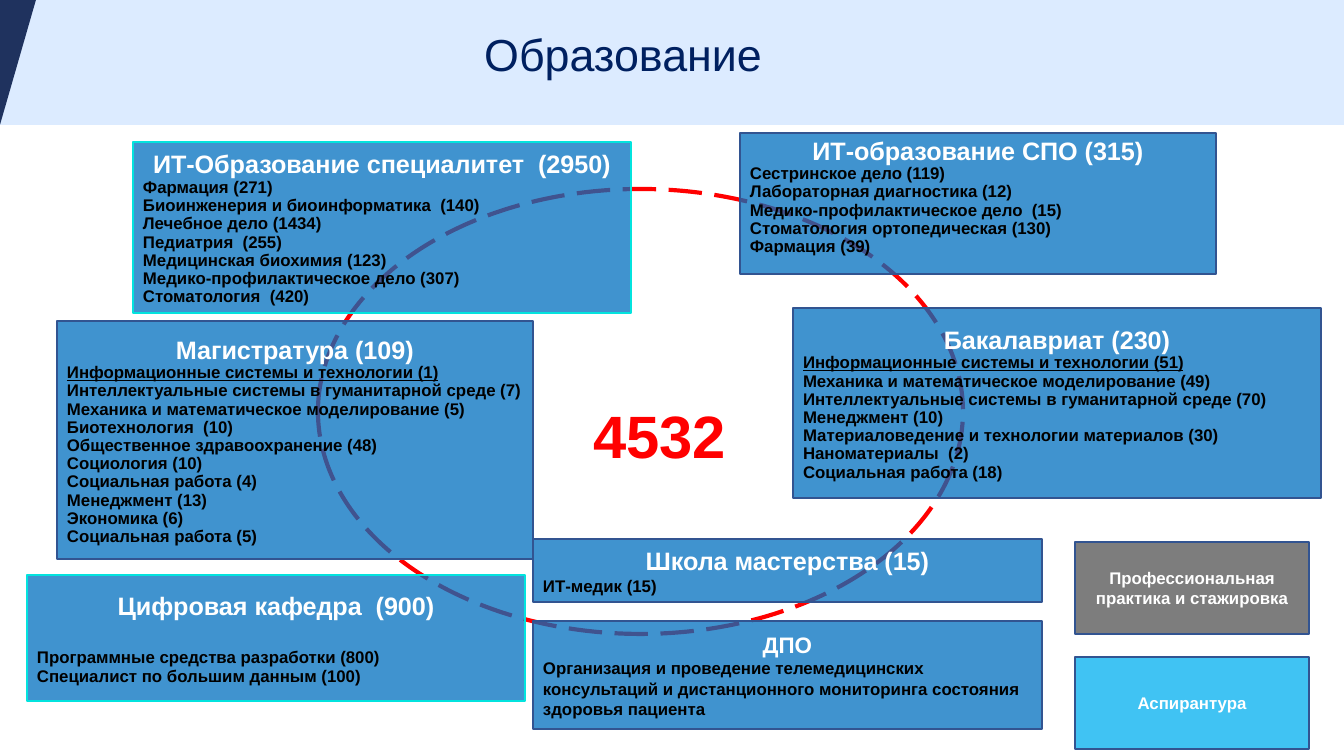
import pptx
import pptx.dml.color
import pptx.enum.dml
import pptx.enum.shapes
import pptx.enum.text
import pptx.oxml.ns
import pptx.util
import lxml.etree

SCALE = 914400 / 134.4
NAVY, BLUE, CYAN, WHITE, RED = "325491", "0070C0", "03E3DE", "FFFFFF", "FF0000"
SHAPES = pptx.enum.shapes.MSO_SHAPE
ALIGN = pptx.enum.text.PP_ALIGN
ANCHOR = pptx.enum.text.MSO_ANCHOR


def emu(px):
    return pptx.util.Emu(round(px * SCALE))


def color(value):
    return pptx.dml.color.RGBColor.from_string(value)


class Board:
    font = "Arial"
    opacity = 75

    def __init__(self, slide):
        self.slide = slide

    def paint(self, shape, fill=None, line=None, width=1, opacity=100):
        shape.shadow.inherit = False
        if fill:
            shape.fill.solid()
            shape.fill.fore_color.rgb = color(fill)
            if opacity < 100:
                node = shape.element.spPr.find(".//" + pptx.oxml.ns.qn("a:srgbClr"))
                alpha = lxml.etree.SubElement(node, pptx.oxml.ns.qn("a:alpha"))
                alpha.set("val", str(opacity * 1000))
        else:
            shape.fill.background()
        if line:
            shape.line.color.rgb = color(line)
            shape.line.width = pptx.util.Pt(width)
        else:
            shape.line.fill.background()
        return shape

    def shape(self, kind, place, **style):
        shape = self.slide.shapes.add_shape(kind, *map(emu, place))
        return self.paint(shape, **style)

    def outline(self, points, **style):
        builder = self.slide.shapes.build_freeform(*points[0], scale=SCALE)
        builder.add_line_segments(points[1:], close=True)
        return self.paint(builder.convert_to_shape(), **style)

    def frame(self, box, anchor, inset=5, wrap=True):
        frame = box.text_frame
        frame.word_wrap = wrap
        frame.vertical_anchor = anchor
        frame.margin_left = frame.margin_right = emu(10)
        frame.margin_top = frame.margin_bottom = emu(inset)
        return frame

    def add_text(self, para, text, size, ink, align, spacing=1.0, bold=True, underline=False):
        para.alignment = align
        para.line_spacing = spacing
        span = para.add_run()
        span.text = text
        span.font.name = self.font
        span.font.size = pptx.util.Pt(size)
        span.font.bold = bold
        span.font.color.rgb = color(ink)
        if underline:
            span.font.underline = True

    def label(self, place, text, size, ink, spacing=1.0, bold=True, wrap=True):
        box = self.slide.shapes.add_textbox(*map(emu, place))
        frame = self.frame(box, ANCHOR.TOP, wrap=wrap)
        self.add_text(frame.paragraphs[0], text, size, ink, ALIGN.CENTER, spacing, bold)

    def card(self, place, heading, items=(), fill=BLUE, line=NAVY, size=13.5,
             spacing=0.9, underlined=None, gap=0, anchor=ANCHOR.MIDDLE, inset=5):
        box = self.shape(SHAPES.RECTANGLE, place, fill=fill, line=line, opacity=self.opacity)
        frame = self.frame(box, anchor, inset)
        self.add_text(frame.paragraphs[0], heading, size, WHITE, ALIGN.CENTER)
        for index, item in enumerate(items):
            para = frame.add_paragraph()
            if index == 0 and gap:
                para.space_before = pptx.util.Pt(gap)
            self.add_text(para, item, 9, "000000", ALIGN.LEFT, spacing, underline=item == underlined)


def main():
    deck = pptx.Presentation()
    deck.slide_width, deck.slide_height = emu(1344), emu(756)
    page = deck.slides.add_slide(deck.slide_layouts[6])
    board = Board(page)

    board.shape(SHAPES.RECTANGLE, (0, 0, 1344, 125), fill="DCEBFF")
    board.outline([(0, 0), (36, 0), (0, 125)], fill="1F325E")
    ring = board.shape(SHAPES.OVAL, (318, 189, 645, 445), line=RED, width=2.25)
    ring.line.dash_style = pptx.enum.dml.MSO_LINE.LONG_DASH
    board.label((93, 28, 1060, 67), "Образование", 24, "002060", spacing=0.9, bold=False)

    board.card((133, 142, 498, 171), "ИТ-Образование специалитет  (2950)", [
        "Фармация (271)",
        "Биоинженерия и биоинформатика  (140)",
        "Лечебное дело (1434)",
        "Педиатрия  (255)",
        "Медицинская биохимия (123)",
        "Медико-профилактическое дело (307)",
        "Стоматология  (420)",
    ], line=CYAN)
    board.card((740, 133, 476, 141), "ИТ-образование СПО (315)", [
        "Сестринское дело (119)",
        "Лабораторная диагностика (12)",
        "Медико-профилактическое дело  (15)",
        "Стоматология ортопедическая (130)",
        "Фармация (39)",
    ], anchor=ANCHOR.TOP, inset=2)
    board.card((57, 321, 476, 238), "Магистратура (109)", [
        "Информационные системы и технологии (1)",
        "Интеллектуальные системы в гуманитарной среде (7)",
        "Механика и математическое моделирование (5)",
        "Биотехнология  (10)",
        "Общественное здравоохранение (48)",
        "Социология (10)",
        "Социальная работа (4)",
        "Менеджмент (13)",
        "Экономика (6)",
        "Социальная работа (5)",
    ], underlined="Информационные системы и технологии (1)")
    board.card((793, 308, 528, 190), "Бакалавриат (230)", [
        "Информационные системы и технологии (51)",
        "Механика и математическое моделирование (49)",
        "Интеллектуальные системы в гуманитарной среде (70)",
        "Менеджмент (10)",
        "Материаловедение и технологии материалов (30)",
        "Наноматериалы  (2)",
        "Социальная работа (18)",
    ], underlined="Информационные системы и технологии (51)")
    board.card((533, 539, 509, 63), "Школа мастерства (15)", ["ИТ-медик (15)"], spacing=1.0)
    board.card((533, 621, 509, 108), "ДПО", [
        "Организация и проведение телемедицинских консультаций "
        "и дистанционного мониторинга состояния здоровья пациента",
    ], size=12, spacing=1.0)
    board.card((1075, 542, 234, 92), "Профессиональная практика и стажировка",
               fill="525252", size=9)
    board.card((1075, 657, 234, 92), "Аспирантура", fill="00B0F0", size=9)
    board.label((579, 394, 161, 86), "4532", 32, RED, wrap=False)
    board.card((27, 575, 498, 126), "Цифровая кафедра  (900)", [
        "Программные средства разработки (800)",
        "Специалист по большим данным (100)",
    ], line=CYAN, gap=15.5)

    deck.save("out.pptx")


if __name__ == "__main__":
    main()
